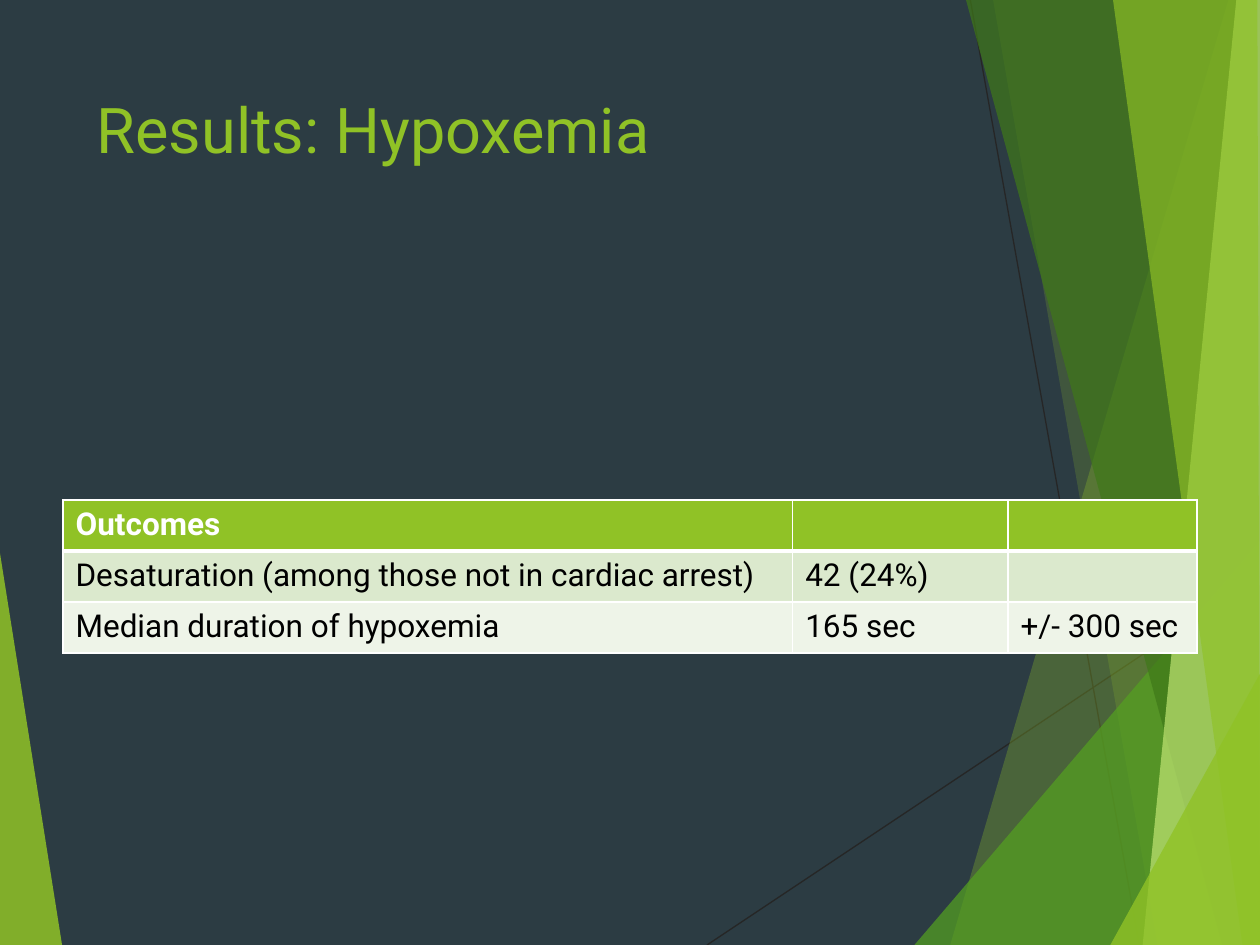
from pptx import Presentation as Deck
from pptx.dml.color import RGBColor as Rgb
from pptx.enum.shapes import MSO_CONNECTOR as Conn
from pptx.enum.text import MSO_ANCHOR as Anchor, PP_ALIGN as Align
from pptx.oxml.ns import qn
from pptx.util import Pt
from lxml.etree import SubElement as Sub

SLATE = Rgb(0x2C, 0x3C, 0x43)
LIME = Rgb(0x90, 0xC2, 0x26)
GREEN = Rgb(0x54, 0xA0, 0x21)
DARK = Rgb(0x3F, 0x78, 0x19)
PALE = Rgb(0xC0, 0xE4, 0x74)
INK = Rgb(0x26, 0x26, 0x26)
BLACK = Rgb(0, 0, 0)
WHITE = Rgb(0xFF, 0xFF, 0xFF)
BANDS = [LIME, Rgb(0xDB, 0xE9, 0xCD), Rgb(0xEE, 0xF4, 0xE8)]

WIDE, HIGH = 720, 540
HEAD = {"name": "Roboto", "size": Pt(18), "bold": True}
BODY = {**HEAD, "bold": False}
TITLE = {**BODY, "size": Pt(36)}

RAYS = [((404, 540), (720.5, 329)), ((554.5, 0), (651, 540))]

# Corner points, colour and opacity in percent, back to front
SHARDS = [
    ([(0, 316), (35.5, 540), (0, 540)], LIME, 85),
    ([(702, 0), (543, 540), (720, 540), (720, 0)], LIME, 30),
    ([(567.5, 0), (661.5, 540), (720, 540), (720, 0)], LIME, 20),
    ([(522.5, 540), (720, 309), (720, 540)], GREEN, 72),
    ([(552, 0), (698.5, 540), (720, 540), (720, 0)], DARK, 70),
    ([(706.5, 0), (653, 540), (720, 540), (720, 0)], PALE, 70),
    ([(636, 0), (710, 540), (720, 540), (718.5, 0)], LIME, 65),
    ([(634.5, 540), (720, 385), (720, 540)], LIME, 80),
]

COLS = [417, 123, 108]
ROW = 29.2
ROWS = [
    ["Outcomes", "", ""],
    ["Desaturation (among those not in cardiac arrest)", "42 (24%)", ""],
    ["Median duration of hypoxemia", "165 sec", "+/- 300 sec"],
]


def style(font, form, color):
    for key, val in form.items():
        setattr(font, key, val)
    font.color.rgb = color


def add_ray(slide, start, end):
    ends = [Pt(v) for v in start + end]
    ray = slide.shapes.add_connector(Conn.STRAIGHT, *ends)
    ray.line.color.rgb = INK
    ray.line.width = Pt(0.75)
    Sub(ray._element.spPr, qn("a:effectLst"))


def add_shard(slide, dots, color, alpha):
    first, *rest = [(Pt(x), Pt(y)) for x, y in dots]
    pen = slide.shapes.build_freeform(*first, scale=1.0)
    pen.add_line_segments(rest, close=True)
    shard = pen.convert_to_shape()
    shard.shadow.inherit = False
    shard.line.fill.background()
    shard.fill.solid()
    shard.fill.fore_color.rgb = color
    tint = shard._element.spPr.find(".//" + qn("a:srgbClr"))
    Sub(tint, qn("a:alpha"), val=str(alpha * 1000))


def add_title(slide, text):
    title = slide.shapes.title
    title.left, title.top, title.width, title.height = map(Pt, (48, 48, 500, 104))
    frame = title.text_frame
    frame.text = text
    frame.word_wrap = True
    frame.vertical_anchor = Anchor.TOP
    para = frame.paragraphs[0]
    para.alignment = Align.LEFT
    style(para.runs[0].font, TITLE, LIME)


def add_edge(cell, side, width):
    edge = Sub(cell._tc.get_or_add_tcPr(), qn("a:" + side), w=str(Pt(width)))
    fill = Sub(edge, qn("a:solidFill"))
    Sub(fill, qn("a:srgbClr"), val=str(WHITE))


def fill_cell(cell, text, row):
    # Edges come before the fill in the cell's XML
    widths = {"lnL": 1, "lnR": 1, "lnT": 3 if row == 1 else 1,
              "lnB": 3 if row == 0 else 1}
    for side, width in widths.items():
        add_edge(cell, side, width)
    cell.fill.solid()
    cell.fill.fore_color.rgb = BANDS[row]
    cell.text = text
    form, color = (BODY, BLACK) if row else (HEAD, WHITE)
    style(cell.text_frame.paragraphs[0].font, form, color)
    for run in cell.text_frame.paragraphs[0].runs:
        style(run.font, form, color)


def add_grid(slide):
    size = map(Pt, (36, 285.6, sum(COLS), ROW * len(ROWS)))
    grid = slide.shapes.add_table(len(ROWS), len(COLS), *size).table
    for col, width in zip(grid.columns, COLS):
        col.width = Pt(width)
    for r, texts in enumerate(ROWS):
        grid.rows[r].height = Pt(ROW)
        for c, text in enumerate(texts):
            fill_cell(grid.cell(r, c), text, r)


def main():
    deck = Deck()
    deck.slide_width, deck.slide_height = Pt(WIDE), Pt(HIGH)
    slide = deck.slides.add_slide(deck.slide_layouts[5])
    back = slide.background.fill
    back.solid()
    back.fore_color.rgb = SLATE

    # Backdrop of thin rays and translucent shards
    for ray in RAYS:
        add_ray(slide, *ray)
    for shard in SHARDS:
        add_shard(slide, *shard)

    # Content
    add_title(slide, "Results: Hypoxemia")
    add_grid(slide)
    deck.save("out.pptx")


if __name__ == "__main__":
    main()
